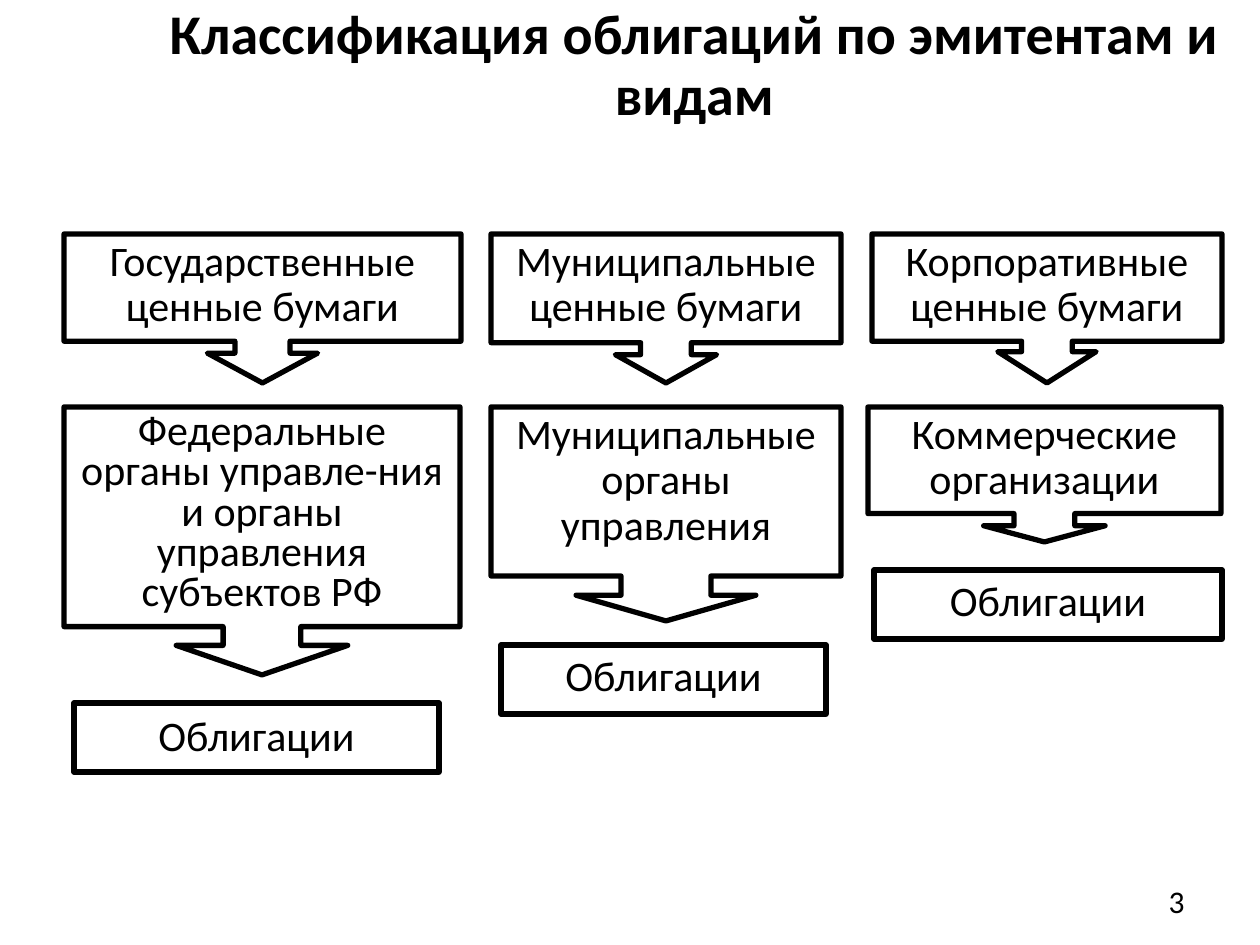
from pptx import Presentation
from pptx import util as u
from pptx.dml.color import RGBColor
from pptx.enum import shapes, text

BLACK = RGBColor(0, 0, 0)
FONT = "Calibri"
SCALE = 914400 // 126  # EMU in one px


def px(*lengths):
    return [u.Emu(length * SCALE) for length in lengths]


class SlideBuilder:
    """Holds the style and the current slide."""

    def __init__(self, page):
        self.page = page

    def add_words(self, frame, words, size=24, bold=False, spacing=0.9,
                  align=text.PP_ALIGN.CENTER, anchor=text.MSO_ANCHOR.TOP):
        frame.word_wrap = True
        frame.auto_size = text.MSO_AUTO_SIZE.NONE
        frame.vertical_anchor = anchor
        para = frame.paragraphs[0]
        para.alignment = align
        para.line_spacing = spacing
        span = para.add_run()
        span.text = words
        span.font.name = FONT
        span.font.size = u.Pt(size)
        span.font.bold = bold
        span.font.color.rgb = BLACK
        return para

    def title(self, area, words):
        box = self.page.shapes.title
        box.left, box.top, box.width, box.height = px(*area)
        para = self.add_words(box.text_frame, words, size=32, bold=True)
        para.space_after = u.Pt(6)

    def page_number(self, area, number):
        box = self.page.shapes.add_textbox(*px(*area))
        self.add_words(box.text_frame, number, size=18, spacing=1.0,
                       align=text.PP_ALIGN.RIGHT, anchor=text.MSO_ANCHOR.MIDDLE)

    def outline(self, kind, area):
        box = self.page.shapes.add_shape(kind, *px(*area))
        box.shadow.inherit = False
        box.fill.background()
        box.line.color.rgb = BLACK
        box.line.width = u.Pt(3)
        return box

    def box(self, area, words, spacing):
        box = self.outline(shapes.MSO_SHAPE.RECTANGLE, area)
        self.add_words(box.text_frame, words, spacing=spacing,
                       anchor=text.MSO_ANCHOR.MIDDLE)

    def callout(self, area, words, adjustments, spacing=0.9):
        box = self.outline(shapes.MSO_SHAPE.DOWN_ARROW_CALLOUT, area)
        for index, value in enumerate(adjustments):
            box.adjustments[index] = value
        self.add_words(box.text_frame, words, spacing=spacing)


SECURITIES_TOP, SECURITIES_HEIGHT = 234, 149
ISSUER_TOP = 407
BOND_HEIGHT = 69

# Left, width, words, arrow adjustments
SECURITIES = [
    (64, 397, "Государственные ценные бумаги", (0.37, 0.37, 0.2, 0.72)),
    (491, 350, "Муниципальные ценные бумаги", (0.34, 0.34, 0.19, 0.73)),
    (872, 350, "Корпоративные ценные бумаги", (0.34, 0.33, 0.21, 0.72)),
]

# Left, width, height, words, arrow adjustments, line spacing
ISSUERS = [
    (64, 396, 268, "Федеральные органы управле-ния и органы управления субъектов РФ",
     (0.29, 0.32, 0.11, 0.82), 0.8),
    (491, 350, 214, "Муниципальные органы управления",
     (0.42, 0.42, 0.12, 0.79), 0.9),
    (868, 353, 135, "Коммерческие организации",
     (0.45, 0.45, 0.12, 0.79), 0.9),
]

# Left, top, width, line spacing
BONDS = [(74, 703, 365, 0.9), (501, 645, 325, 0.8), (874, 570, 348, 0.8)]


def main():
    deck = Presentation()
    deck.slide_width, deck.slide_height = u.Inches(10), u.Inches(7.5)
    builder = SlideBuilder(deck.slides.add_slide(deck.slide_layouts[5]))

    # Heading and page number
    builder.title((154, 0, 1081, 127), "Классификация облигаций по эмитентам и видам")
    builder.page_number((903, 876, 294, 50), "3")

    # Kinds of securities
    for left, width, words, adjustments in SECURITIES:
        area = (left, SECURITIES_TOP, width, SECURITIES_HEIGHT)
        builder.callout(area, words, adjustments)

    # Issuers
    for left, width, height, words, adjustments, spacing in ISSUERS:
        builder.callout((left, ISSUER_TOP, width, height), words, adjustments, spacing)

    # Bonds below each issuer
    for left, top, width, spacing in BONDS:
        builder.box((left, top, width, BOND_HEIGHT), "Облигации", spacing)

    deck.save("out.pptx")


if __name__ == "__main__":
    main()
